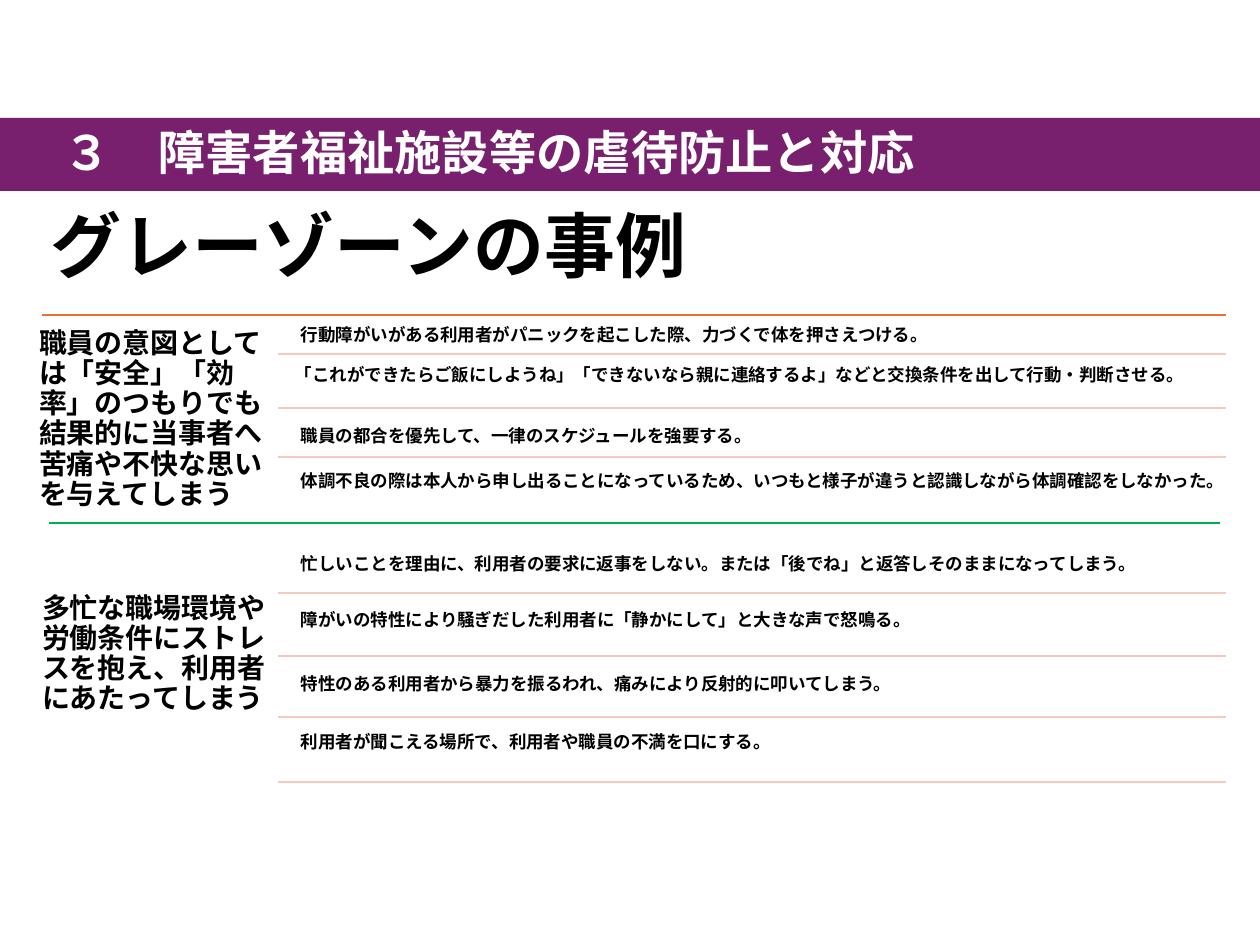
from lxml import etree
from pptx import Presentation
from pptx import util as u
from pptx.dml.color import RGBColor
from pptx.enum import shapes, text
from pptx.oxml.ns import qn

PX = 914400 / 126
FONT = "Noto Sans CJK JP"
COLORS = {"black": "000000", "white": "FFFFFF", "band": "78206E",
          "orange": "E97132", "green": "00B050", "rule": "F4C9BF"}


def write(sp, box, words, size, color="black", inset=(5, 5), after=0,
          anchor=text.MSO_ANCHOR.TOP):
    sp.left, sp.top, sp.width, sp.height = [u.Emu(round(v * PX)) for v in box]
    tf = sp.text_frame
    tf.word_wrap = True
    tf.auto_size = text.MSO_AUTO_SIZE.NONE
    tf.vertical_anchor = anchor
    tf.margin_left = tf.margin_right = u.Emu(round(inset[0] * PX))
    tf.margin_top = tf.margin_bottom = u.Emu(round(inset[1] * PX))
    tf.text = words
    p = tf.paragraphs[0]
    p.alignment = text.PP_ALIGN.LEFT
    p.line_spacing = 0.9
    p.space_before = u.Pt(0)
    p.space_after = u.Pt(after)
    r = p.runs[0]
    r.font.size = u.Pt(size)
    r.font.bold = True
    r.font.color.rgb = RGBColor.from_string(COLORS[color])
    r.font.name = FONT
    etree.SubElement(r.font._element, qn("a:ea")).set("typeface", FONT)


def rule(left, right, y, color):
    x1, x2, y = [u.Emu(round(v * PX)) for v in (left, right, y)]
    line = s.shapes.add_connector(shapes.MSO_CONNECTOR.STRAIGHT, x1, y, x2, y)
    line.line.color.rgb = RGBColor.from_string(COLORS[color])
    line.line.width = u.Pt(1.5)
    etree.SubElement(line._element.spPr, qn("a:effectLst"))


prs = Presentation()
prs.slide_width, prs.slide_height = u.Inches(10), u.Inches(7.5)
s = prs.slides.add_slide(prs.slide_layouts[5])

# Title
write(s.shapes.title, (38, 184, 740, 131), "グレーゾーンの事例", 40.5,
      inset=(13, 6), anchor=text.MSO_ANCHOR.MIDDLE)

# Section rules
rule(42, 1226, 315, "orange")
rule(49, 1220, 523, "green")

# Causes on the left
causes = [
    ((29, 319, 257, 197), "職員の意図としては「安全」「効率」のつもりでも結果的に当事者へ苦痛や不快な思いを与えてしまう"),
    ((32, 584, 258, 176), "多忙な職場環境や労働条件にストレスを抱え、利用者にあたってしまう"),
]
for box, words in causes:
    write(s.shapes.add_textbox(0, 0, 0, 0), box, words, 16, inset=(10, 10), after=5.6)

# Cases on the right: left, top, rule below, words
cases = [
    (296, 321, 354, "行動障がいがある利用者がパニックを起こした際、力づくで体を押さえつける。"),
    (290, 361, 408, "「これができたらご飯にしようね」「できないなら親に連絡するよ」などと交換条件を出して行動・判断させる。"),
    (296, 422, 457, "職員の都合を優先して、一律のスケジュールを強要する。"),
    (296, 467, None, "体調不良の際は本人から申し出ることになっているため、いつもと様子が違うと認識しながら体調確認をしなかった。"),
    (296, 550, 593, "忙しいことを理由に、利用者の要求に返事をしない。または「後でね」と返答しそのままになってしまう。"),
    (296, 606, 656, "障がいの特性により騒ぎだした利用者に「静かにして」と大きな声で怒鳴る。"),
    (296, 670, 717, "特性のある利用者から暴力を振るわれ、痛みにより反射的に叩いてしまう。"),
    (296, 728, 782, "利用者が聞こえる場所で、利用者や職員の不満を口にする。"),
]
for left, top, below, words in cases:
    write(s.shapes.add_textbox(0, 0, 0, 0), (left, top, 930, 55), words, 10, after=3.5)
    if below:
        rule(278, 1226, below, "rule")

# Chapter band
band = s.shapes.add_shape(shapes.MSO_SHAPE.RECTANGLE, 0, u.Emu(round(118 * PX)),
                          prs.slide_width, u.Emu(round(73 * PX)))
band.shadow.inherit = False
band.fill.solid()
band.fill.fore_color.rgb = RGBColor.from_string(COLORS["band"])
band.line.fill.background()
write(s.shapes.add_textbox(0, 0, 0, 0), (55, 123, 1000, 64),
      "３　障害者福祉施設等の虐待防止と対応", 27, "white", inset=(9, 5),
      anchor=text.MSO_ANCHOR.MIDDLE)

prs.save("out.pptx")
